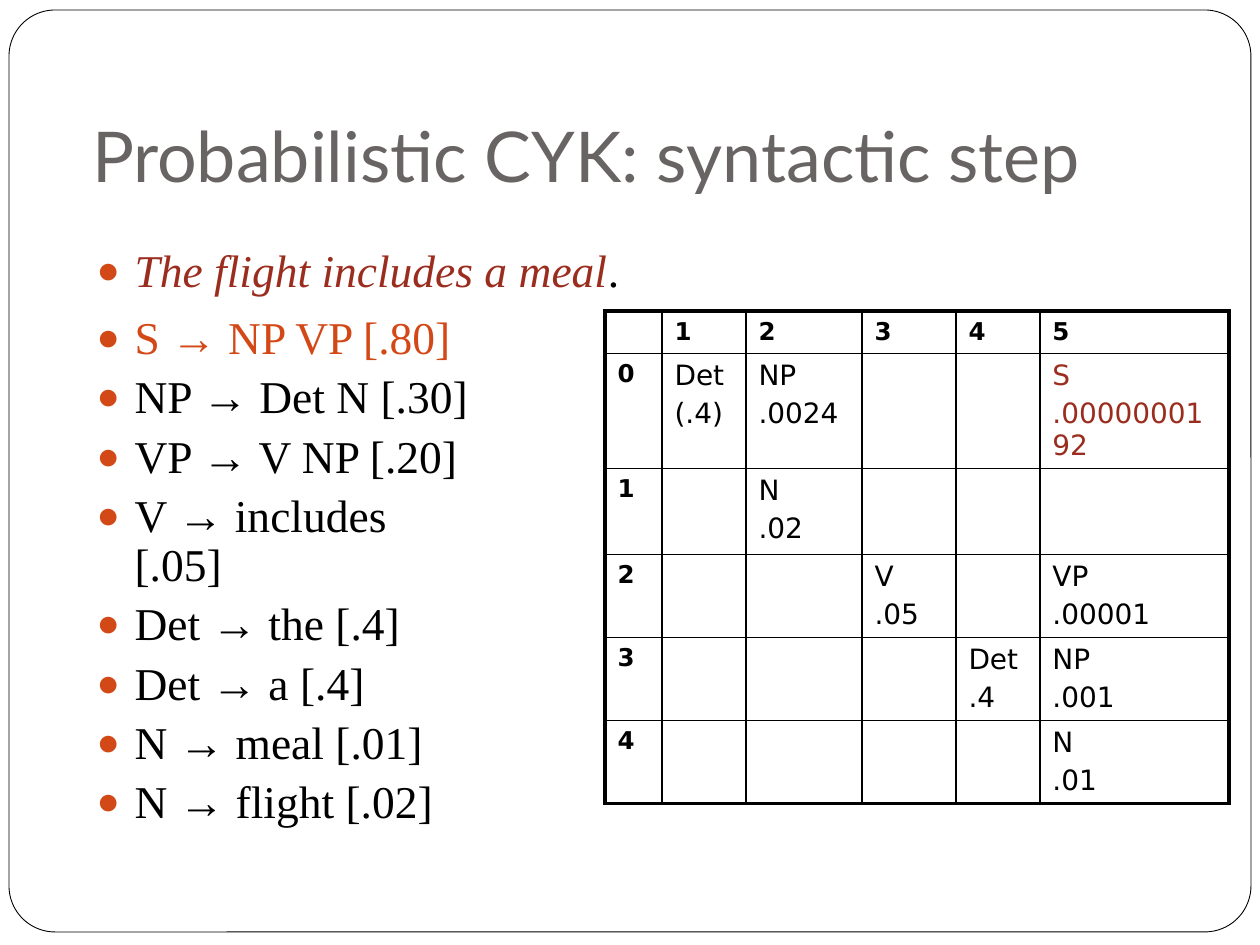
from typing import Any, NamedTuple

from lxml import etree
from pptx import Presentation
from pptx.dml.color import RGBColor
from pptx.enum.shapes import MSO_SHAPE
from pptx.enum.text import MSO_ANCHOR, MSO_AUTO_SIZE, PP_ALIGN
from pptx.oxml.ns import qn
from pptx.util import Emu, Pt

BLACK = RGBColor(0x00, 0x00, 0x00)
WHITE = RGBColor(0xFF, 0xFF, 0xFF)
GREY = RGBColor(0x69, 0x64, 0x64)
ORANGE = RGBColor(0xD3, 0x48, 0x17)
DARK_RED = RGBColor(0x9B, 0x2D, 0x1F)

ROUNDED = MSO_SHAPE.ROUNDED_RECTANGLE
BOTTOM = MSO_ANCHOR.BOTTOM
NO_AUTOFIT = MSO_AUTO_SIZE.NONE
LEFT = PP_ALIGN.LEFT

PIXELS_PER_INCH = 126
TWO_CONTENT_LAYOUT = 3
BULLET_INDENT = 38
THIN, THICK = 1, 2.25


class Box(NamedTuple):
    left: int
    top: int
    width: int
    height: int


class Span(NamedTuple):
    text: str
    color: RGBColor = BLACK
    italic: bool = False


class Entry(NamedTuple):
    symbol: str
    probability: str
    color: RGBColor = BLACK


TITLE_BOX = Box(79, 42, 1103, 168)
SENTENCE_BOX = Box(84, 242, 1103, 63)
RULES_BOX = Box(84, 309, 410, 573)
FRAME_BOX = Box(9, 10, 1242, 922)
TABLE_LEFT, TABLE_TOP = 605, 311
COLUMN_WIDTHS = [57, 84, 116, 94, 84, 189]
ROW_HEIGHTS = [41, 115, 86, 83, 83, 83]

SENTENCE = [[Span("The flight includes a meal", DARK_RED, True), Span(".")]]
RULES = [
    [Span("S → NP VP [.80]", ORANGE)],
    [Span("NP → Det N [.30]")],
    [Span("VP → V NP [.20]")],
    [Span("V → includes [.05]")],
    [Span("Det → the [.4]")],
    [Span("Det → a [.4]")],
    [Span("N → meal [.01]")],
    [Span("N → flight [.02]")],
]
# Chart entries by (start, end) word position
ENTRIES = {
    (0, 1): Entry("Det", "(.4)"),
    (0, 2): Entry("NP", ".0024"),
    (0, 5): Entry("S", ".0000000192", DARK_RED),
    (1, 2): Entry("N", ".02"),
    (2, 3): Entry("V", ".05"),
    (2, 5): Entry("VP", ".00001"),
    (3, 4): Entry("Det", ".4"),
    (3, 5): Entry("NP", ".001"),
    (4, 5): Entry("N", ".01"),
}


def px(length: int) -> Emu:
    return Emu(round(length * 914400 / PIXELS_PER_INCH))


def apply(target: Any, formats: dict[str, Any]) -> None:
    for name, value in formats.items():
        setattr(target, name, value)


def place(shape: Any, box: Box) -> None:
    apply(shape, {name: px(value) for name, value in box._asdict().items()})


def add_run(paragraph: Any, text: str, color: RGBColor, formats: dict[str, Any]) -> None:
    run = paragraph.add_run()
    run.text = text
    apply(run.font, formats)
    run.font.color.rgb = color


def add_bullet(paragraph: Any) -> None:
    properties = paragraph._p.get_or_add_pPr()
    properties.set("marL", str(px(BULLET_INDENT)))
    properties.set("indent", str(-px(BULLET_INDENT)))
    color = etree.SubElement(properties, qn("a:buClr"))
    etree.SubElement(color, qn("a:srgbClr"), val=str(ORANGE))
    etree.SubElement(properties, qn("a:buSzPct"), val="85000")
    etree.SubElement(properties, qn("a:buChar"), char="●")


def fill_list(shape: Any, box: Box, items: list[list[Span]]) -> None:
    place(shape, box)
    frame = shape.text_frame
    apply(frame, {"word_wrap": True, "auto_size": NO_AUTOFIT})
    for index, spans in enumerate(items):
        paragraph = frame.add_paragraph() if index else frame.paragraphs[0]
        apply(paragraph, {"line_spacing": 0.9, "space_before": Pt(5.8)})
        add_bullet(paragraph)
        for span in spans:
            formats = {"name": "Times New Roman", "size": Pt(26), "italic": span.italic}
            add_run(paragraph, span.text, span.color, formats)


def fill_title(shape: Any) -> None:
    place(shape, TITLE_BOX)
    frame = shape.text_frame
    apply(frame, {
        "word_wrap": True, "auto_size": NO_AUTOFIT, "vertical_anchor": BOTTOM,
        "margin_left": px(13), "margin_top": px(6),
        "margin_right": px(13), "margin_bottom": px(13),
    })
    paragraph = frame.paragraphs[0]
    paragraph.alignment = LEFT
    add_run(paragraph, "Probabilistic CYK: syntactic step", GREY,
            {"name": "Lato", "size": Pt(40)})


def add_frame(slide: Any) -> None:
    shape = slide.shapes.add_shape(ROUNDED, *map(px, FRAME_BOX))
    shape.adjustments[0] = 0.05
    shape.shadow.inherit = False
    shape.fill.solid()
    shape.fill.fore_color.rgb = WHITE
    shape.line.color.rgb = BLACK
    shape.line.width = Pt(0.5)
    slide.shapes._spTree.insert(2, shape._element)  # behind the text


def set_borders(cell: Any, widths: dict[str, float]) -> None:
    properties = cell._tc.get_or_add_tcPr()
    for side, width in widths.items():
        line = etree.SubElement(properties, qn(f"a:ln{side}"), w=str(Pt(width)))
        fill = etree.SubElement(line, qn("a:solidFill"))
        etree.SubElement(fill, qn("a:srgbClr"), val=str(BLACK))


def fill_cell(cell: Any, lines: list[str], size: int, color: RGBColor, bold: bool) -> None:
    frame = cell.text_frame
    if not lines:
        frame.paragraphs[0]._p.get_or_add_endParaRPr().set("sz", str(size * 100))
    for index, text in enumerate(lines):
        paragraph = frame.add_paragraph() if index else frame.paragraphs[0]
        paragraph.space_before = Pt(size * 0.2)
        add_run(paragraph, text, color,
                {"name": "DejaVu Sans", "size": Pt(size), "bold": bold})


def add_chart_table(slide: Any) -> None:
    rows, columns = len(ROW_HEIGHTS), len(COLUMN_WIDTHS)
    box = Box(TABLE_LEFT, TABLE_TOP, sum(COLUMN_WIDTHS), sum(ROW_HEIGHTS))
    table = slide.shapes.add_table(rows, columns, *map(px, box)).table
    apply(table, {"first_row": False, "horz_banding": False})
    for column, width in zip(table.columns, COLUMN_WIDTHS):
        column.width = px(width)
    for row, height in zip(table.rows, ROW_HEIGHTS):
        row.height = px(height)

    for row in range(rows):
        for column in range(columns):
            cell = table.cell(row, column)
            set_borders(cell, {
                "L": THICK if column == 0 else THIN,
                "R": THICK if column == columns - 1 else THIN,
                "T": THICK if row == 0 else THIN,
                "B": THICK if row == rows - 1 else THIN,
            })
            cell.fill.background()
            if row and column:
                entry = ENTRIES.get((row - 1, column))
                lines = [entry.symbol, entry.probability] if entry else []
                fill_cell(cell, lines, 16, entry.color if entry else BLACK, False)
            else:
                label = str(column) if column else str(row - 1)
                fill_cell(cell, [label] if row or column else [], 14, BLACK, True)


def main() -> None:
    presentation = Presentation()
    apply(presentation, {"slide_width": px(1260), "slide_height": px(945)})
    slide = presentation.slides.add_slide(presentation.slide_layouts[TWO_CONTENT_LAYOUT])
    title, sentence, rules = list(slide.placeholders)[:3]
    add_frame(slide)
    fill_title(title)
    fill_list(sentence, SENTENCE_BOX, SENTENCE)
    add_chart_table(slide)
    fill_list(rules, RULES_BOX, RULES)
    presentation.save("out.pptx")


if __name__ == "__main__":
    main()
